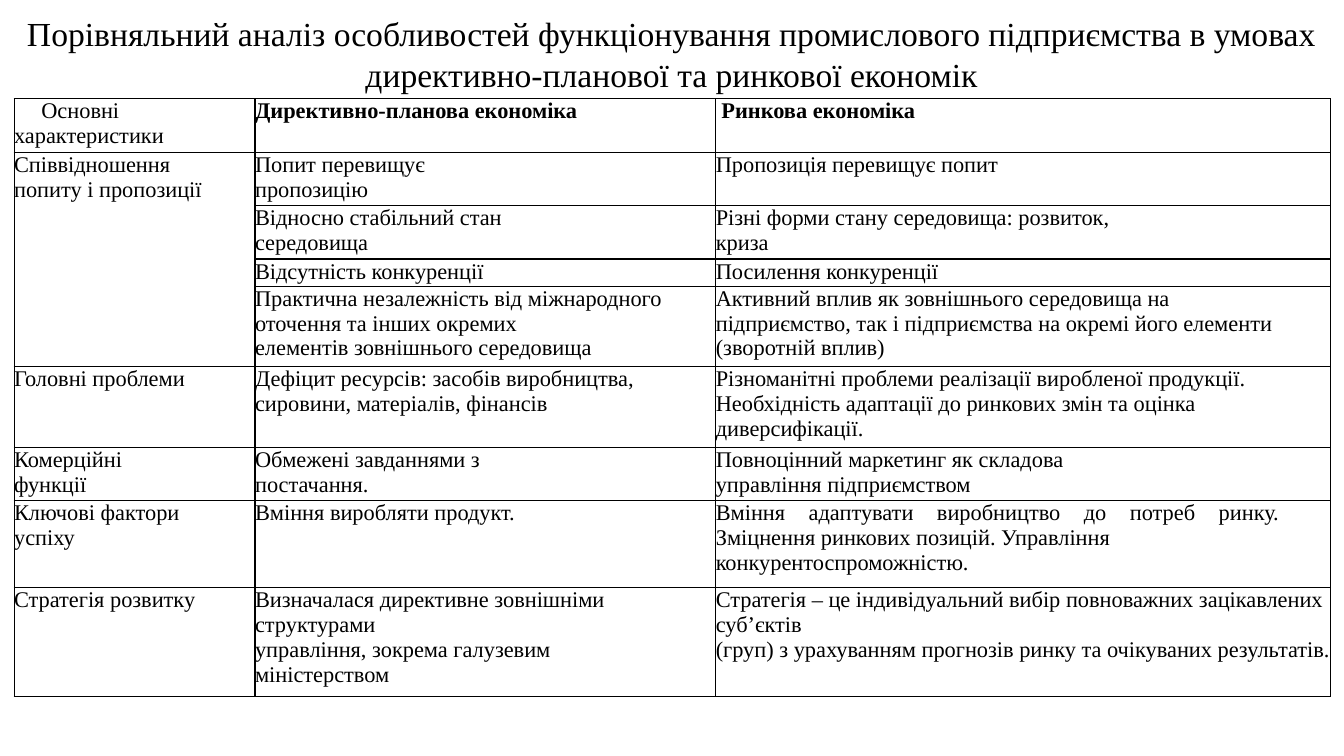
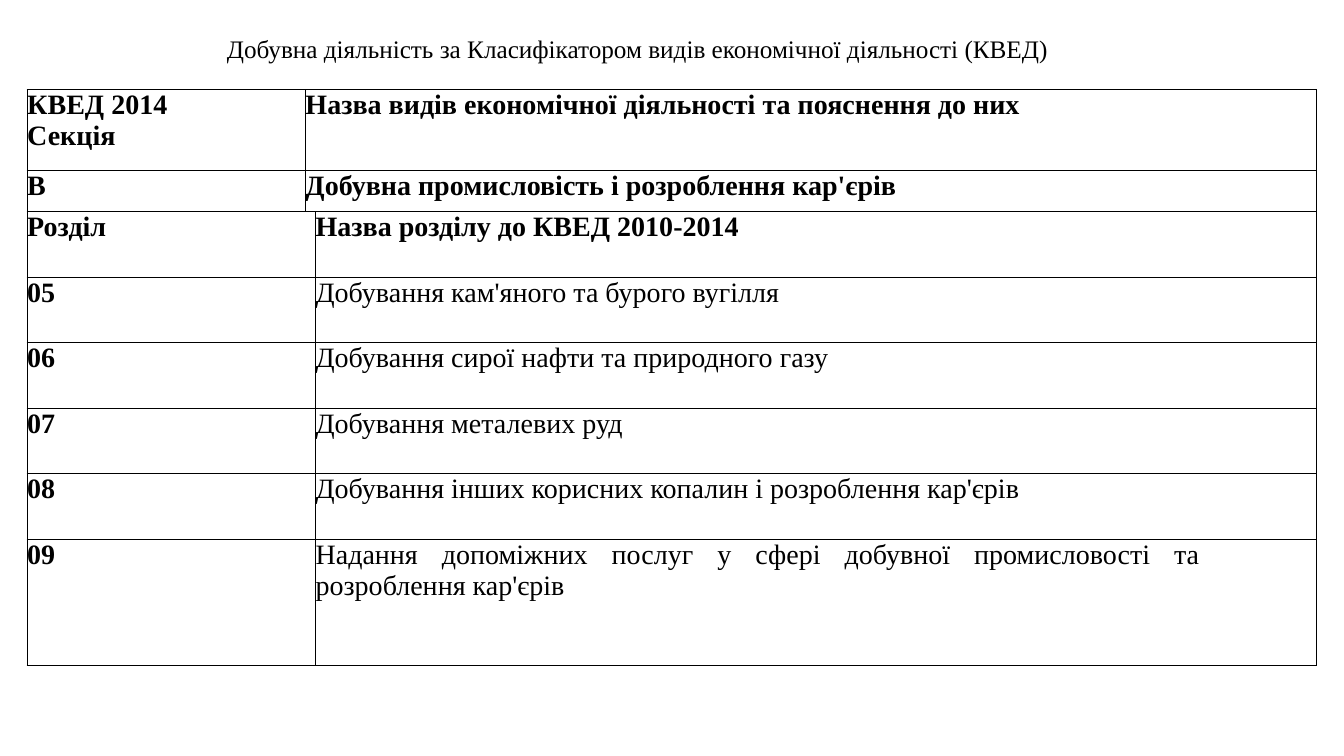
from dataclasses import dataclass, field

from pptx import Presentation
from pptx.dml.color import RGBColor
from pptx.enum.text import MSO_ANCHOR as Anchor, MSO_AUTO_SIZE as Fit, PP_ALIGN as Align
from pptx.oxml import parse_xml
from pptx.oxml.ns import nsdecls
from pptx.util import Inches, Pt

FONT = "Times New Roman"
BLACK = RGBColor(0x00, 0x00, 0x00)
Spot = tuple[int, int]  # row, column


@dataclass
class Head:
    text: str
    box: tuple[float, float, float, float]
    size: int
    align: Align


@dataclass
class Grid:
    left: float
    top: float
    cols: list[float]
    rows: list[float]
    size: int
    cells: list[list[str]]  # a line break starts a new paragraph
    spans: list[tuple[Spot, Spot]]
    bold: set[Spot]
    just: set[Spot]
    inset: dict[Spot, float] = field(default_factory=dict)  # right margins
    indent: dict[Spot, float] = field(default_factory=dict)  # first lines


def style(para, size: int, bold: bool, align: Align) -> None:
    para.alignment = align
    for run in para.runs:
        font = run.font
        font.name, font.size, font.bold = FONT, Pt(size), bold
        font.color.rgb = BLACK


def add_head(slide, head: Head) -> None:
    title = slide.shapes.title
    title.left, title.top, title.width, title.height = map(Inches, head.box)
    frame = title.text_frame
    frame.text = head.text
    frame.word_wrap = True
    frame.auto_size = Fit.NONE
    frame.vertical_anchor = Anchor.TOP
    style(frame.paragraphs[0], head.size, False, head.align)


def add_edges(cell) -> None:
    props = cell._tc.get_or_add_tcPr()
    for side in "LRTB":
        props.append(parse_xml(
            f'<a:ln{side} {nsdecls("a")} w="{Pt(1)}"><a:solidFill>'
            f'<a:srgbClr val="{BLACK}"/></a:solidFill></a:ln{side}>'))


def add_grid(slide, grid: Grid) -> None:
    table = slide.shapes.add_table(
        len(grid.rows), len(grid.cols), Inches(grid.left), Inches(grid.top),
        Inches(sum(grid.cols)), Inches(sum(grid.rows))).table
    table.first_row = table.horz_banding = False
    for col, width in zip(table.columns, grid.cols):
        col.width = Inches(width)
    for row, height in zip(table.rows, grid.rows):
        row.height = Inches(height)
    for start, end in grid.spans:
        table.cell(*start).merge(table.cell(*end))

    for r, row in enumerate(table.rows):
        texts = iter(grid.cells[r])
        for c, cell in enumerate(row.cells):
            spot = (r, c)
            cell.margin_left = cell.margin_top = cell.margin_bottom = 0
            cell.margin_right = Inches(grid.inset.get(spot, 0))
            add_edges(cell)
            cell.fill.background()
            if cell.is_spanned:
                continue
            cell.text_frame.text = next(texts)
            align = Align.JUSTIFY if spot in grid.just else Align.LEFT
            for para in cell.text_frame.paragraphs:
                style(para, grid.size, spot in grid.bold, align)
                if spot in grid.indent:
                    para._p.get_or_add_pPr().set("indent", str(Inches(grid.indent[spot])))


# Planned and market economies
PLAN_HEAD = Head(
    "Порівняльний аналіз особливостей функціонування промислового підприємства "
    "в умовах директивно-планової та ринкової економік",
    (0.13, 0.08, 13.06, 0.91), 24, Align.CENTER)
PLAN = Grid(
    left=0.14, top=0.98, size=16,
    cols=[2.39, 4.57, 6.1],
    rows=[0.53, 0.53, 0.53, 0.27, 0.8, 0.8, 0.53, 0.86, 1.08],
    cells=[
        ["Основні характеристики", "Директивно-планова економіка", " Ринкова економіка"],
        ["Співвідношення попиту і пропозиції", "Попит перевищує\nпропозицію",
         "Пропозиція перевищує попит"],
        ["Відносно стабільний стан\nсередовища",
         "Різні форми стану середовища: розвиток,\nкриза"],
        ["Відсутність конкуренції", "Посилення конкуренції"],
        ["Практична незалежність від міжнародного оточення та інших окремих\n"
         "елементів зовнішнього середовища",
         "Активний вплив як зовнішнього середовища на підприємство, "
         "так і підприємства на окремі його елементи (зворотній вплив)"],
        ["Головні проблеми",
         "Дефіцит ресурсів: засобів виробництва, сировини, матеріалів, фінансів",
         "Різноманітні проблеми реалізації виробленої продукції.\n"
         "Необхідність адаптації до ринкових змін та оцінка диверсифікації."],
        ["Комерційні\nфункції", "Обмежені завданнями з\nпостачання.",
         "Повноцінний маркетинг як складова\nуправління підприємством"],
        ["Ключові фактори успіху", "Вміння виробляти продукт.",
         "Вміння адаптувати виробництво до потреб ринку. Зміцнення ринкових "
         "позицій. Управління\nконкурентоспроможністю."],
        ["Стратегія розвитку",
         "Визначалася директивне зовнішніми структурами\n"
         "управління, зокрема галузевим міністерством",
         "Стратегія – це індивідуальний вибір повноважних зацікавлених суб’єктів\n"
         "(груп) з урахуванням прогнозів ринку та очікуваних результатів."],
    ],
    spans=[((1, 0), (4, 0))],
    bold={(0, 1), (0, 2)},
    just={(7, 2)},
    inset={(1, 0): 0.48, (7, 0): 0.48, (4, 2): 0.51, (7, 2): 0.51, (8, 1): 0.5},
    indent={(0, 0): 0.27})

# Mining classes
MINE_HEAD = Head(
    "Добувна діяльність за Класифікатором видів економічної діяльності (КВЕД)",
    (2.15, 0.28, 9.27, 0.4), 18, Align.LEFT)
MINE = Grid(
    left=0.27, top=0.89, size=20,
    cols=[2.76, 0.1, 9.93],
    rows=[0.8, 0.41] + [0.65] * 5 + [1.25],
    cells=[
        ["КВЕД 2014\nСекція", "Назва видів економічної діяльності та пояснення до них"],
        ["B", "Добувна промисловість і розроблення кар'єрів"],
        ["Розділ", "Назва розділу до КВЕД 2010-2014"],
        ["05", "Добування кам'яного та бурого вугілля"],
        ["06", "Добування сирої нафти та природного газу"],
        ["07", "Добування металевих руд"],
        ["08", "Добування інших корисних копалин і розроблення кар'єрів"],
        ["09", "Надання допоміжних послуг у сфері добувної промисловості "
               "та розроблення кар'єрів"],
    ],
    spans=[((r, 1), (r, 2)) for r in range(2)] + [((r, 0), (r, 1)) for r in range(2, 8)],
    bold={(r, 0) for r in range(8)} | {(0, 1), (1, 1), (2, 2)},
    just={(r, c) for r in range(8) for c in range(3)},
    inset={(7, 2): 1.16})


def main() -> None:
    deck = Presentation()
    deck.slide_width, deck.slide_height = Inches(13.33), Inches(7.5)
    for head, grid in ((PLAN_HEAD, PLAN), (MINE_HEAD, MINE)):
        slide = deck.slides.add_slide(deck.slide_layouts[5])
        add_head(slide, head)
        add_grid(slide, grid)
    deck.save("out.pptx")


if __name__ == "__main__":
    main()
